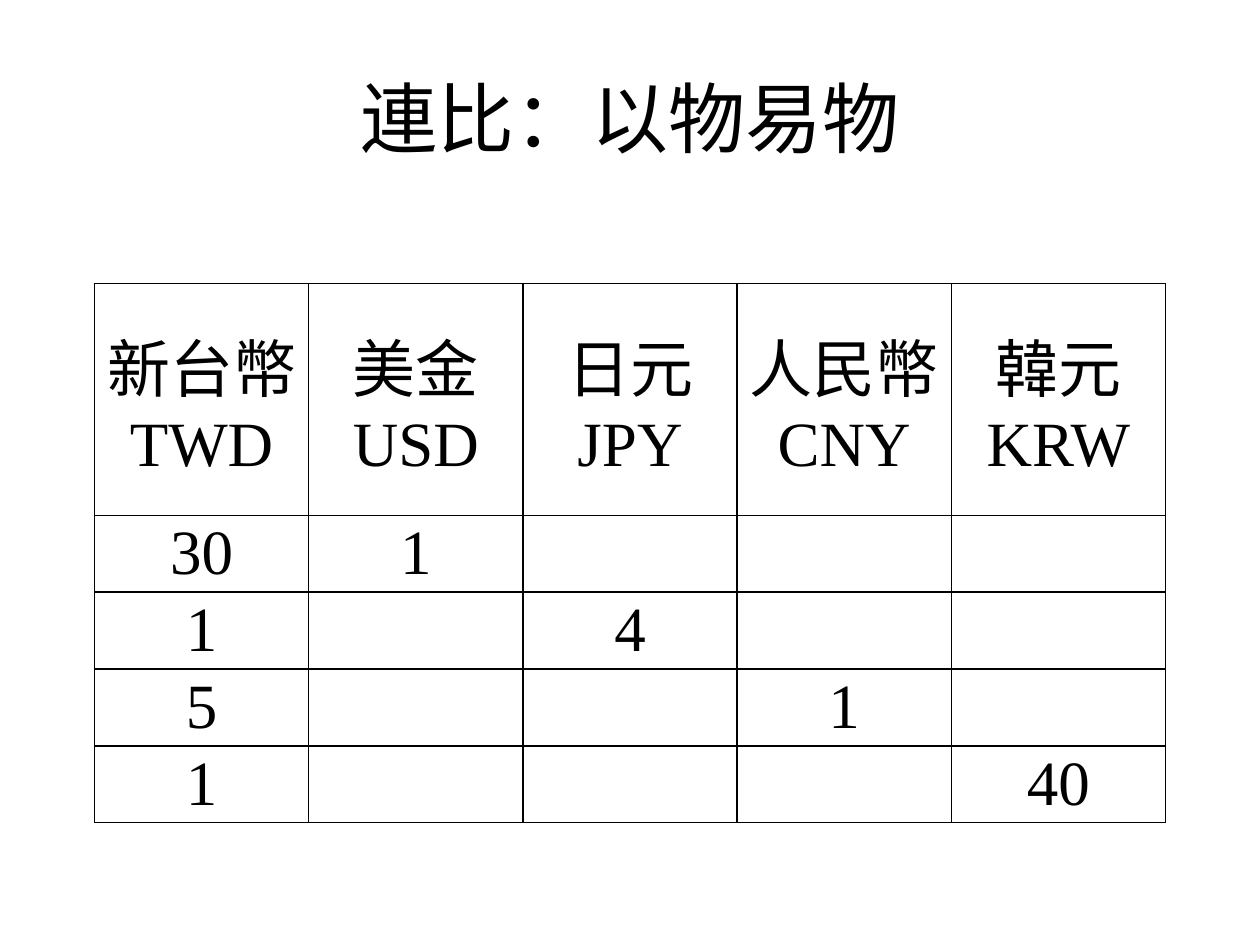
from dataclasses import dataclass

from pptx import Presentation
from pptx.dml.color import RGBColor
from pptx.enum.text import MSO_ANCHOR, PP_ALIGN
from pptx.oxml import parse_xml
from pptx.oxml.ns import nsdecls
from pptx.util import Pt

SCALE = 9144


@dataclass(frozen=True)
class Theme:
    font: str = "Times New Roman"
    ink: str = "000000"
    paper: str = "FFFFFF"
    title: int = 44
    body: int = 36
    line: int = 1


THEME = Theme()
HEADS = ["新台幣TWD", "美金USD", "日元JPY", "人民幣CNY", "韓元KRW"]
RATES = [("30", "1"), ("1", "4"), ("5", "1"), ("1", "40")]


def px(num):
    return num * SCALE


def write(frame, text, size=THEME.body, color=THEME.ink, align=PP_ALIGN.CENTER):
    para = frame.paragraphs[0]
    para.alignment = align
    run = para.add_run()
    run.text = text
    run.font.name = THEME.font
    run.font.size = Pt(size)
    run.font.color.rgb = RGBColor.from_string(color)


def border(cell):
    props = cell._tc.get_or_add_tcPr()
    for side in "LRTB":
        props.append(parse_xml(
            f'<a:ln{side} {nsdecls("a")} w="{Pt(THEME.line)}"><a:solidFill>'
            f'<a:srgbClr val="{THEME.ink}"/></a:solidFill></a:ln{side}>'))


def add_title(slide, text, left, top, width, height):
    title = slide.shapes.title
    title.left, title.top = px(left), px(top)
    title.width, title.height = px(width), px(height)
    title.text_frame.vertical_anchor = MSO_ANCHOR.MIDDLE
    write(title.text_frame, text, size=THEME.title)


def add_rates(slide, left, top, width, head, row):
    count = len(HEADS)
    rows = [HEADS]
    for spot, (base, rate) in enumerate(RATES, 1):
        rows.append([base] + [rate if col == spot else "" for col in range(1, count)])
    high = head + row * len(RATES)
    table = slide.shapes.add_table(
        len(rows), count, px(left), px(top), px(width), px(high)).table
    table.first_row = table.horz_banding = False
    for col in table.columns:
        col.width = px(width // count)
    for num, texts in enumerate(rows):
        table.rows[num].height = px(row if num else head)
        for col, text in enumerate(texts):
            cell = table.cell(num, col)
            cell.margin_left = cell.margin_right = px(7)
            cell.margin_top = cell.margin_bottom = 0
            cell.vertical_anchor = MSO_ANCHOR.MIDDLE
            border(cell)
            cell.fill.solid()
            cell.fill.fore_color.rgb = RGBColor.from_string(THEME.paper)
            if text:
                write(cell.text_frame, text)


def main():
    deck = Presentation()
    deck.slide_width, deck.slide_height = px(1000), px(750)
    slide = deck.slides.add_slide(deck.slide_layouts[5])
    add_title(slide, "連比：以物易物", 50, 30, 900, 125)
    add_rates(slide, 75, 225, 850, head=184, row=61)
    deck.save("out.pptx")


if __name__ == "__main__":
    main()
